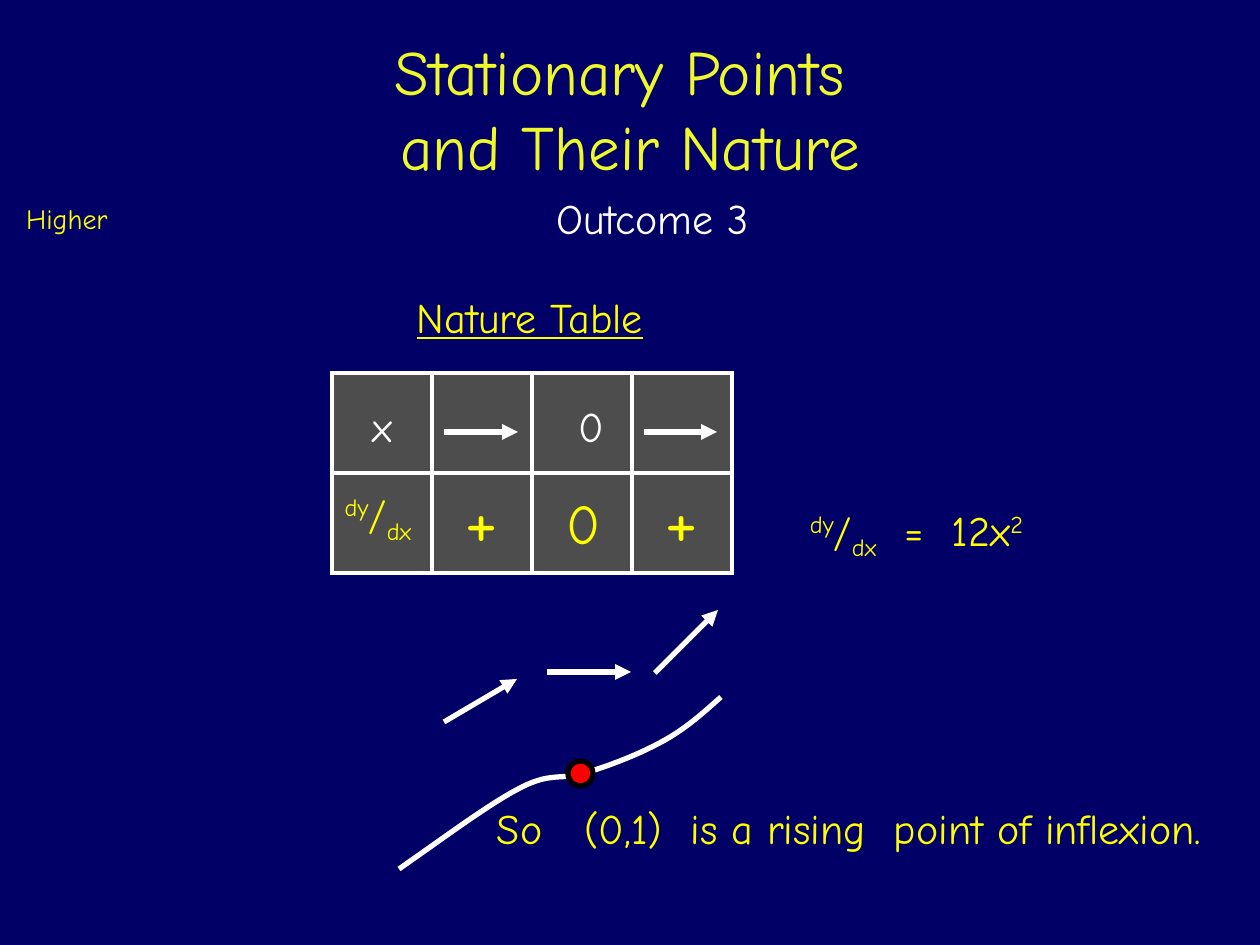
from dataclasses import dataclass

from lxml import etree
from pptx import Presentation
from pptx.dml.color import RGBColor
from pptx.enum.shapes import MSO_CONNECTOR, MSO_SHAPE
from pptx.enum.text import MSO_ANCHOR, PP_ALIGN
from pptx.oxml.ns import qn
from pptx.util import Emu, Pt

CENTER = PP_ALIGN.CENTER
MIDDLE = MSO_ANCHOR.MIDDLE
STRAIGHT = MSO_CONNECTOR.STRAIGHT
OVAL = MSO_SHAPE.OVAL


@dataclass(frozen=True)
class Theme:
    font: str = "Comic Neue"
    background: str = "000066"
    cell: str = "4D4D4D"
    white: str = "FFFFFF"
    yellow: str = "FFFF00"
    title: str = "EEF82A"
    red: str = "FF0000"
    black: str = "000000"
    small: int = 16
    body: int = 24
    zero: int = 32
    heading: int = 36
    sign: int = 44
    line: int = 3


THEME = Theme()
SLIDE = (1260, 945)
DERIVATIVE = [("dy", 30), ("/", 0), ("dx", -25)]

TEXTS = [
    ((63, 26, 1134, 147), [("Stationary Points \vand Their Nature", 0)], THEME.heading, THEME.title, False),
    ((9, 195, 116, 47), [("Higher", 0)], THEME.small, THEME.yellow, False),
    ((533, 186, 239, 64), [("Outcome 3", 0)], THEME.body, THEME.white, False),
    ((368, 285, 324, 64), [("Nature Table", 0)], THEME.body, THEME.yellow, True),
    ((780, 498, 273, 64), DERIVATIVE + [("  =  12x", 0), ("2", 30)], THEME.body, THEME.yellow, False),
    ((438, 796, 822, 64), [("So   (0,1)  is a rising  point of inflexion.", 0)], THEME.body, THEME.yellow, False),
]

TABLE_LEFT, TABLE_TOP, CELL = 332, 373, 100
PLUS = ([("+", 0)], THEME.sign, THEME.yellow, 0, 0)
EMPTY = ([], THEME.body, THEME.white, 0, 0)
NATURE_TABLE = [
    [([("x", 0)], THEME.body, THEME.white, 0, 12), EMPTY,
     ([("0", 0)], THEME.body, THEME.white, 18, 12), EMPTY],
    [(DERIVATIVE, THEME.body, THEME.yellow, -8, -8), PLUS,
     ([("0", 0)], THEME.zero, THEME.yellow, 4, 6), PLUS],
]

ARROWS = [
    (444, 432, 518, 432),
    (644, 432, 717, 432),
    (444, 722, 517, 679),
    (547, 672, 631, 672),
    (655, 673, 718, 610),
]

CURVE_START = (399, 869)
CURVE = [
    ((445, 837), (489, 804), (520, 788)),
    ((552, 771), (564, 781), (588, 772)),
    ((612, 765), (644, 752), (665, 740)),
    ((688, 727), (704, 712), (721, 697)),
]
CURVE_STEPS = 12
POINT = (568, 761, 25, 25)


def px(*lengths):
    return [Emu(round(length * 914400 / 126)) for length in lengths]


def color(value):
    return RGBColor.from_string(value)


def style_line(line, value):
    line.color.rgb = color(value)
    line.width = Pt(THEME.line)


def write(frame, spans, size, value, underline=False):
    para = frame.paragraphs[0]
    para.alignment = CENTER
    para.font.name = THEME.font
    para.font.size = Pt(size)
    para.font.color.rgb = color(value)
    if underline:
        para.font.underline = True
    for text, baseline in spans:
        for index, part in enumerate(text.split("\v")):
            if index:
                para.add_line_break()
            span = para.add_run()
            span.text = part
            if baseline:
                span._r.get_or_add_rPr().set("baseline", str(baseline * 1000))


def add_text(page, place, spans, size, value, underline):
    box = page.shapes.add_textbox(*px(*place))
    box.text_frame.word_wrap = True
    write(box.text_frame, spans, size, value, underline)


def add_borders(cell):
    properties = cell._tc.get_or_add_tcPr()
    for side in ("lnL", "lnR", "lnT", "lnB"):
        border = etree.SubElement(properties, qn(f"a:{side}"), w=str(Pt(THEME.line)))
        fill = etree.SubElement(border, qn("a:solidFill"))
        etree.SubElement(fill, qn("a:srgbClr"), val=THEME.white)


def add_nature_table(page):
    rows, columns = len(NATURE_TABLE), len(NATURE_TABLE[0])
    place = px(TABLE_LEFT, TABLE_TOP, columns * CELL, rows * CELL)
    table = page.shapes.add_table(rows, columns, *place).table
    table.first_row = table.horz_banding = False
    for row, entries in enumerate(NATURE_TABLE):
        for column, (spans, size, value, right, down) in enumerate(entries):
            cell = table.cell(row, column)
            add_borders(cell)
            cell.fill.solid()
            cell.fill.fore_color.rgb = color(THEME.cell)
            cell.vertical_anchor = MIDDLE
            cell.margin_left, cell.margin_right = px(max(right, 0), max(-right, 0))
            cell.margin_top, cell.margin_bottom = px(max(down, 0), max(-down, 0))
            write(cell.text_frame, spans, size, value)


def add_arrow(page, ends):
    arrow = page.shapes.add_connector(STRAIGHT, *px(*ends))
    style_line(arrow.line, THEME.white)
    etree.SubElement(arrow.line._get_or_add_ln(), qn("a:tailEnd"), type="triangle")
    etree.SubElement(arrow._element.spPr, qn("a:effectLst"))


def curve_points():
    start = CURVE_START
    for first, second, end in CURVE:
        for step in range(1, CURVE_STEPS + 1):
            t = step / CURVE_STEPS
            u = 1 - t
            weights = (u ** 3, 3 * u * u * t, 3 * u * t * t, t ** 3)
            controls = (start, first, second, end)
            yield px(*(sum(w * c[axis] for w, c in zip(weights, controls)) for axis in (0, 1)))
        start = end


def add_curve(page):
    builder = page.shapes.build_freeform(*px(*CURVE_START))
    builder.add_line_segments(list(curve_points()), close=False)
    curve = builder.convert_to_shape()
    curve.shadow.inherit = False
    curve.fill.background()
    style_line(curve.line, THEME.white)


def add_point(page):
    point = page.shapes.add_shape(OVAL, *px(*POINT))
    point.shadow.inherit = False
    point.fill.solid()
    point.fill.fore_color.rgb = color(THEME.red)
    style_line(point.line, THEME.black)


def main():
    deck = Presentation()
    deck.slide_width, deck.slide_height = px(*SLIDE)
    page = deck.slides.add_slide(deck.slide_layouts[6])
    page.background.fill.solid()
    page.background.fill.fore_color.rgb = color(THEME.background)
    add_curve(page)
    add_nature_table(page)
    for ends in ARROWS:
        add_arrow(page, ends)
    for entry in TEXTS:
        add_text(page, *entry)
    add_point(page)
    deck.save("out.pptx")


if __name__ == "__main__":
    main()
